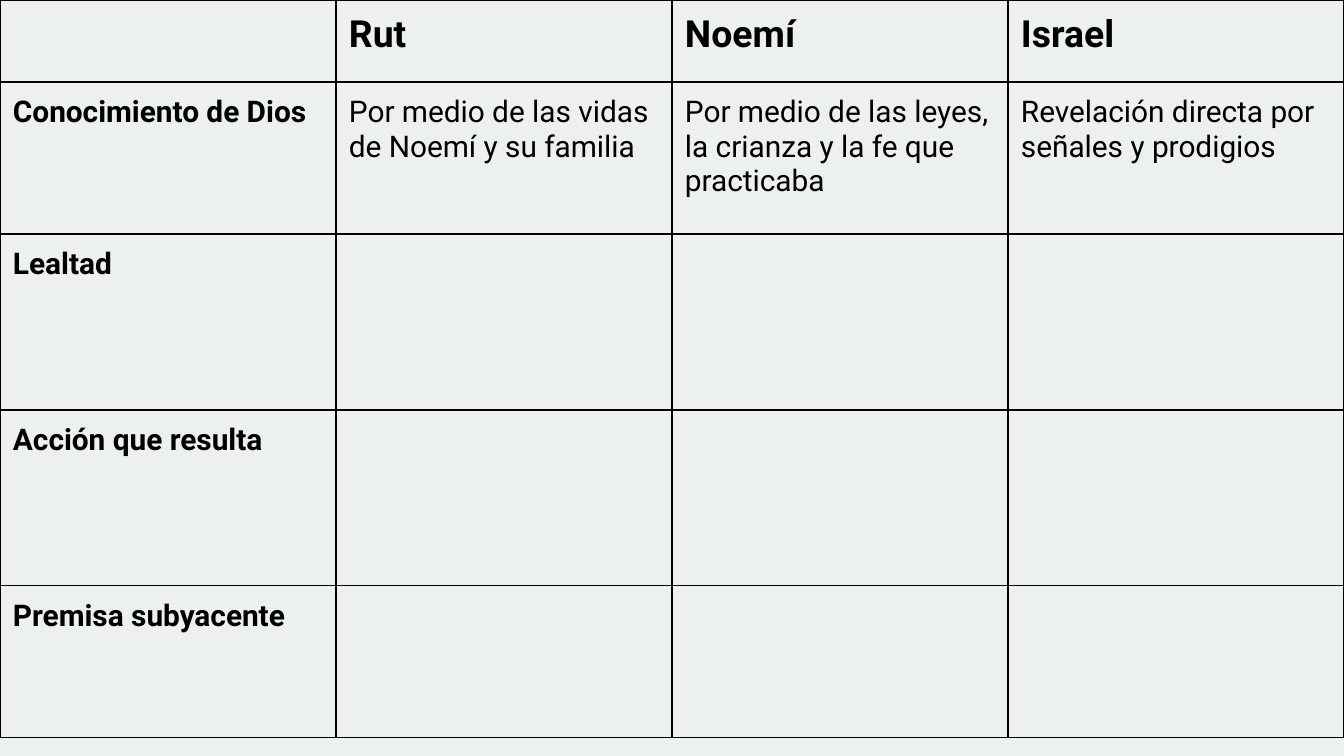
from dataclasses import dataclass

from lxml import etree
from pptx import Presentation
from pptx.dml.color import RGBColor
from pptx.oxml.ns import qn
from pptx.util import Pt

HEADINGS = ["", "Rut", "Noemí", "Israel"]
ROWS = [
    ["Conocimiento de Dios",
     "Por medio de las vidas de Noemí y su familia",
     "Por medio de las leyes, la crianza y la fe que practicaba",
     "Revelación directa por señales y prodigios"],
    ["Lealtad", "", "", ""],
    ["Acción que resulta", "", "", ""],
    ["Premisa subyacente", "", "", ""],
]

# Lengths in px
SLIDE_W, SLIDE_H = 1344, 756
ROW_HEIGHTS = [82, 152, 176, 176, 152]
CELL_MARGIN = 13
EMU_PER_PX = 914400 / 134.4


@dataclass(frozen=True)
class Theme:
    background: str = "ECF0F1"
    ink: str = "000000"
    font: str = "Roboto"
    heading: Pt = Pt(20)
    body: Pt = Pt(16)
    border: Pt = Pt(0.75)


THEME = Theme()


def px(length):
    return round(length * EMU_PER_PX)


def draw_borders(cell):
    properties = cell._tc.get_or_add_tcPr()
    for side in ("a:lnL", "a:lnR", "a:lnT", "a:lnB"):
        line = etree.SubElement(properties, qn(side), w=str(int(THEME.border)))
        fill = etree.SubElement(line, qn("a:solidFill"))
        etree.SubElement(fill, qn("a:srgbClr"), val=THEME.ink)


def fill_cell(cell, text, size, bold):
    draw_borders(cell)
    cell.fill.background()
    cell.margin_left = cell.margin_right = px(CELL_MARGIN)
    cell.margin_top = cell.margin_bottom = px(CELL_MARGIN)
    if not text:
        return
    run = cell.text_frame.paragraphs[0].add_run()
    run.text = text
    run.font.name = THEME.font
    run.font.size = size
    run.font.bold = bold
    run.font.color.rgb = RGBColor.from_string(THEME.ink)


def add_comparison(slide):
    content = [HEADINGS] + ROWS
    table = slide.shapes.add_table(
        len(content), len(HEADINGS), 0, 0, px(SLIDE_W), px(sum(ROW_HEIGHTS))
    ).table
    table.first_row = False
    table.horz_banding = False
    for column in table.columns:
        column.width = px(SLIDE_W / len(HEADINGS))
    for r, (texts, height) in enumerate(zip(content, ROW_HEIGHTS)):
        table.rows[r].height = px(height)
        size = THEME.heading if r == 0 else THEME.body
        for c, text in enumerate(texts):
            fill_cell(table.cell(r, c), text, size, bold=r == 0 or c == 0)


def main():
    deck = Presentation()
    deck.slide_width, deck.slide_height = px(SLIDE_W), px(SLIDE_H)
    slide = deck.slides.add_slide(deck.slide_layouts[6])
    slide.background.fill.solid()
    slide.background.fill.fore_color.rgb = RGBColor.from_string(THEME.background)
    add_comparison(slide)
    deck.save("out.pptx")


if __name__ == "__main__":
    main()
